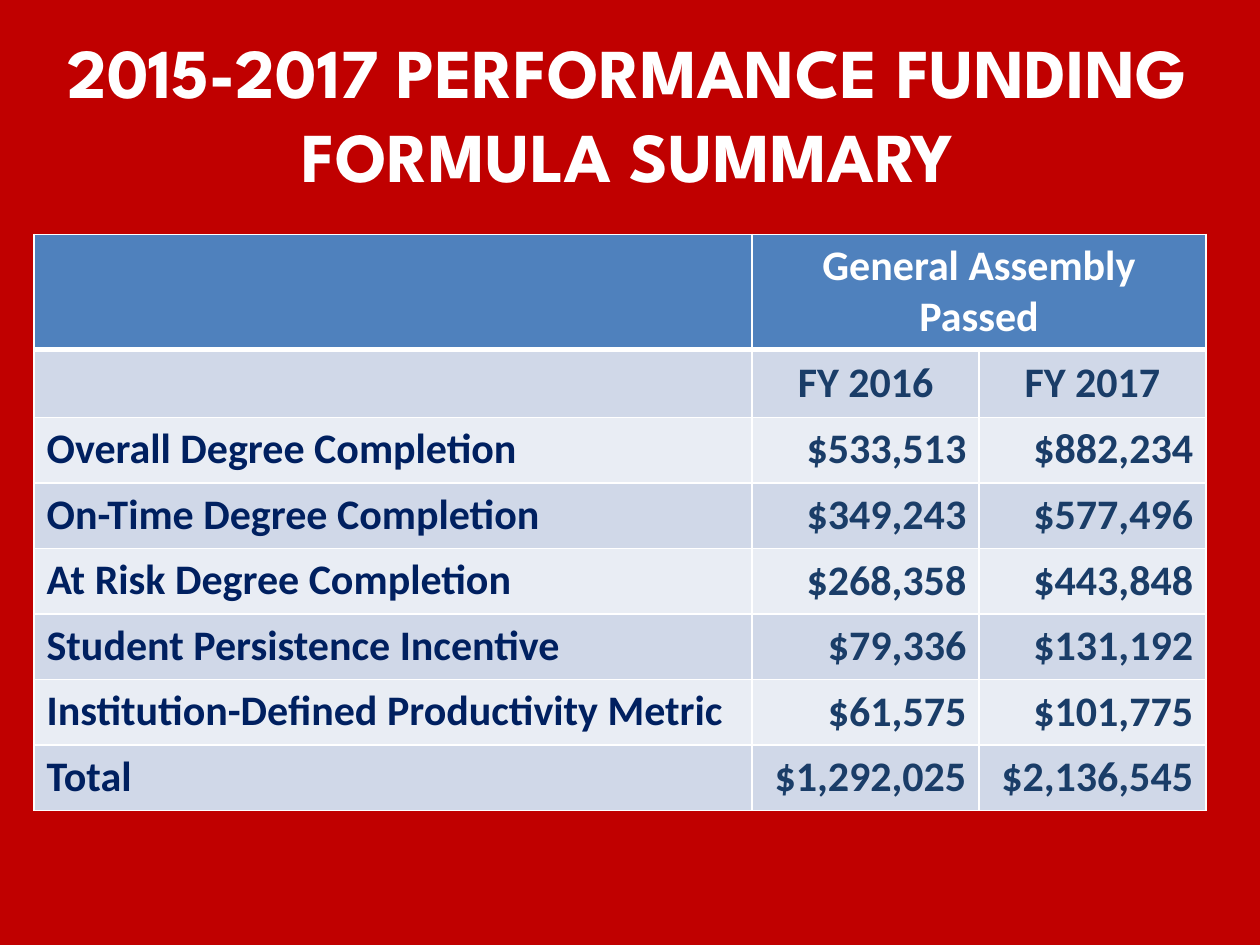
from dataclasses import dataclass

from lxml import etree
from pptx import Presentation
from pptx.dml.color import RGBColor
from pptx.enum.text import MSO_ANCHOR, MSO_AUTO_SIZE, PP_ALIGN
from pptx.oxml.ns import qn
from pptx.util import Inches, Pt

LEFT, CENTER, RIGHT = PP_ALIGN.LEFT, PP_ALIGN.CENTER, PP_ALIGN.RIGHT
TOP, MIDDLE = MSO_ANCHOR.TOP, MSO_ANCHOR.MIDDLE
NO_AUTO_SIZE = MSO_AUTO_SIZE.NONE
TITLE_ONLY = 5

COLORS = {
    "red": "C00000",
    "white": "FFFFFF",
    "header": "4F81BD",
    "dark_band": "D0D8E8",
    "light_band": "E9EDF4",
    "label": "002060",
    "amount": "1A3D68",
}
TITLE = "2015-2017 PERFORMANCE FUNDING FORMULA SUMMARY"
YEARS = ("FY 2016", "FY 2017")
COLUMN_WIDTHS = (5.7, 1.8, 1.8)
HEADING_HEIGHT, BODY_HEIGHT = 0.54, 0.52
HEADING_ROWS = 2


@dataclass
class Metric:
    label: str
    amounts: tuple[str, str]


METRICS = (
    Metric("Overall Degree Completion", ("$533,513", "$882,234")),
    Metric("On-Time Degree Completion", ("$349,243", "$577,496")),
    Metric("At Risk Degree Completion", ("$268,358", "$443,848")),
    Metric("Student Persistence Incentive", ("$79,336", "$131,192")),
    Metric("Institution-Defined Productivity Metric", ("$61,575", "$101,775")),
    Metric("Total", ("$1,292,025", "$2,136,545")),
)


def rgb(name: str) -> RGBColor:
    return RGBColor.from_string(COLORS[name])


def add_text(frame, text: str, size: int, font: str, color: str, align) -> None:
    para = frame.paragraphs[0]
    para.alignment = align
    span = para.add_run()
    span.text = text
    span.font.size = Pt(size)
    span.font.name = font
    span.font.bold = True
    span.font.color.rgb = rgb(color)


def style_cell(cell, fill: str, bottom: int = 1, top: int = 1) -> None:
    """Draw white borders, then the fill, which must follow them in the XML."""
    properties = cell._tc.get_or_add_tcPr()
    for side, width in (("L", 1), ("R", 1), ("T", top), ("B", bottom)):
        line = etree.SubElement(properties, qn(f"a:ln{side}"), w=str(Pt(width)))
        solid = etree.SubElement(line, qn("a:solidFill"))
        etree.SubElement(solid, qn("a:srgbClr"), val=COLORS["white"])
    cell.fill.solid()
    cell.fill.fore_color.rgb = rgb(fill)


def write_cell(cell, text: str, color: str, align, anchor=MIDDLE) -> None:
    cell.vertical_anchor = anchor
    add_text(cell.text_frame, text, 24, "Calibri", color, align)


def add_title(page) -> None:
    box = page.shapes.title
    box.left, box.top = Inches(0.15), Inches(0.18)
    box.width, box.height = Inches(9.66), Inches(1.45)
    box.fill.solid()
    box.fill.fore_color.rgb = rgb("red")
    frame = box.text_frame
    frame.word_wrap = True
    frame.auto_size = NO_AUTO_SIZE
    frame.vertical_anchor = TOP
    add_text(frame, TITLE, 40, "League Spartan", "white", CENTER)


def add_funding_table(page) -> None:
    row_count = HEADING_ROWS + len(METRICS)
    height = HEADING_ROWS * HEADING_HEIGHT + len(METRICS) * BODY_HEIGHT
    table = page.shapes.add_table(
        row_count, len(COLUMN_WIDTHS), Inches(0.27), Inches(1.86),
        Inches(sum(COLUMN_WIDTHS)), Inches(height),
    ).table
    for column, width in zip(table.columns, COLUMN_WIDTHS):
        column.width = Inches(width)

    # Bands and borders
    for index, row in enumerate(table.rows):
        row.height = Inches(HEADING_HEIGHT if index < HEADING_ROWS else BODY_HEIGHT)
        band = "dark_band" if index % 2 else "light_band"
        for cell in row.cells:
            style_cell(cell, "header" if index == 0 else band,
                       bottom=3 if index == 0 else 1, top=3 if index == 1 else 1)

    # Headings
    table.cell(0, 1).merge(table.cell(0, 2))
    write_cell(table.cell(0, 1), "General Assembly Passed", "white", CENTER)
    for column, year in enumerate(YEARS, 1):
        write_cell(table.cell(1, column), year, "amount", CENTER)

    # Metrics
    for row, metric in enumerate(METRICS, HEADING_ROWS):
        write_cell(table.cell(row, 0), metric.label, "label", LEFT, TOP)
        anchor = TOP if row == HEADING_ROWS else MIDDLE
        for column, amount in enumerate(metric.amounts, 1):
            write_cell(table.cell(row, column), amount, "amount", RIGHT, anchor)


def main() -> None:
    deck = Presentation()
    deck.slide_width, deck.slide_height = Inches(10), Inches(7.5)
    page = deck.slides.add_slide(deck.slide_layouts[TITLE_ONLY])
    page.background.fill.solid()
    page.background.fill.fore_color.rgb = rgb("red")
    add_title(page)
    add_funding_table(page)
    deck.save("out.pptx")


if __name__ == "__main__":
    main()
